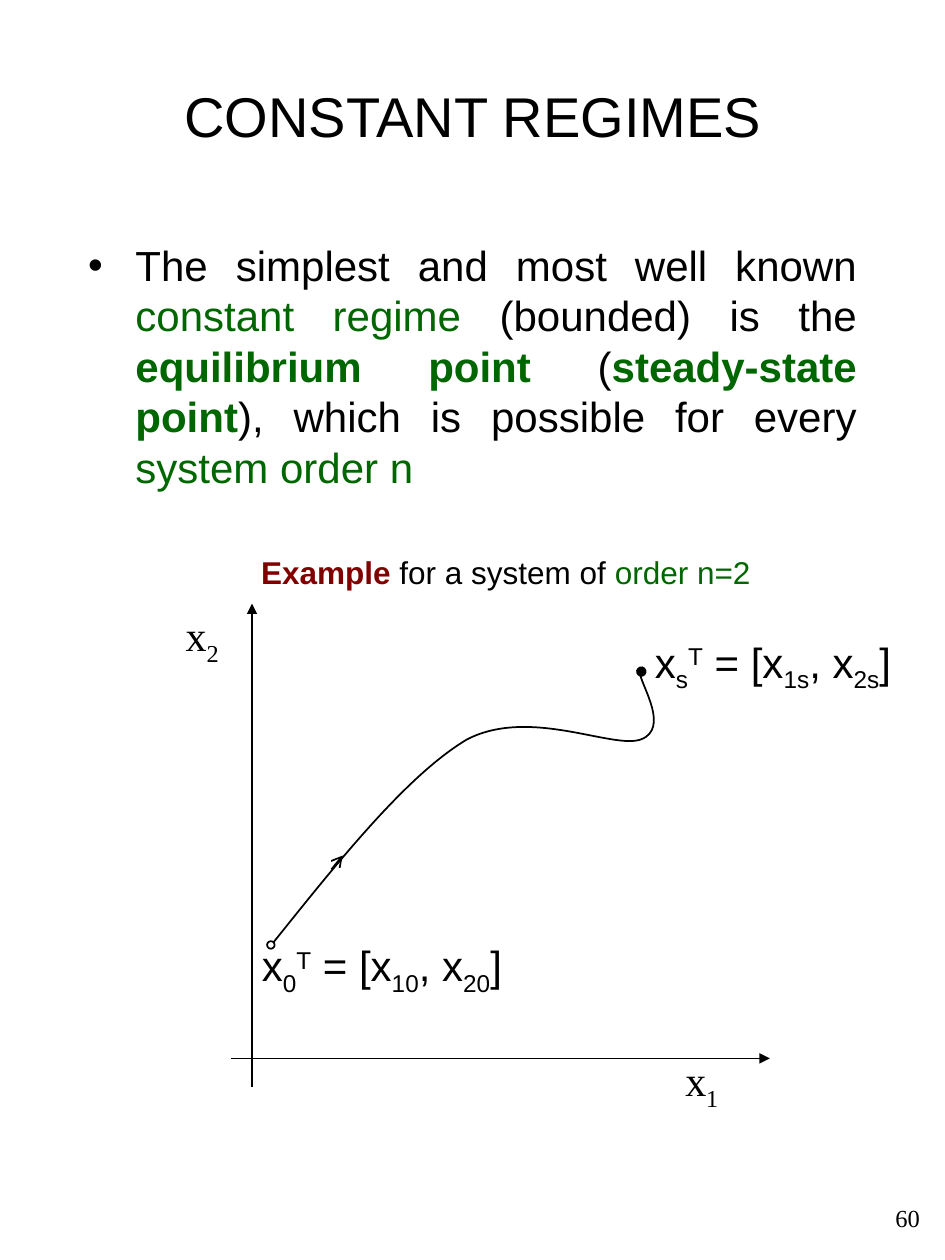
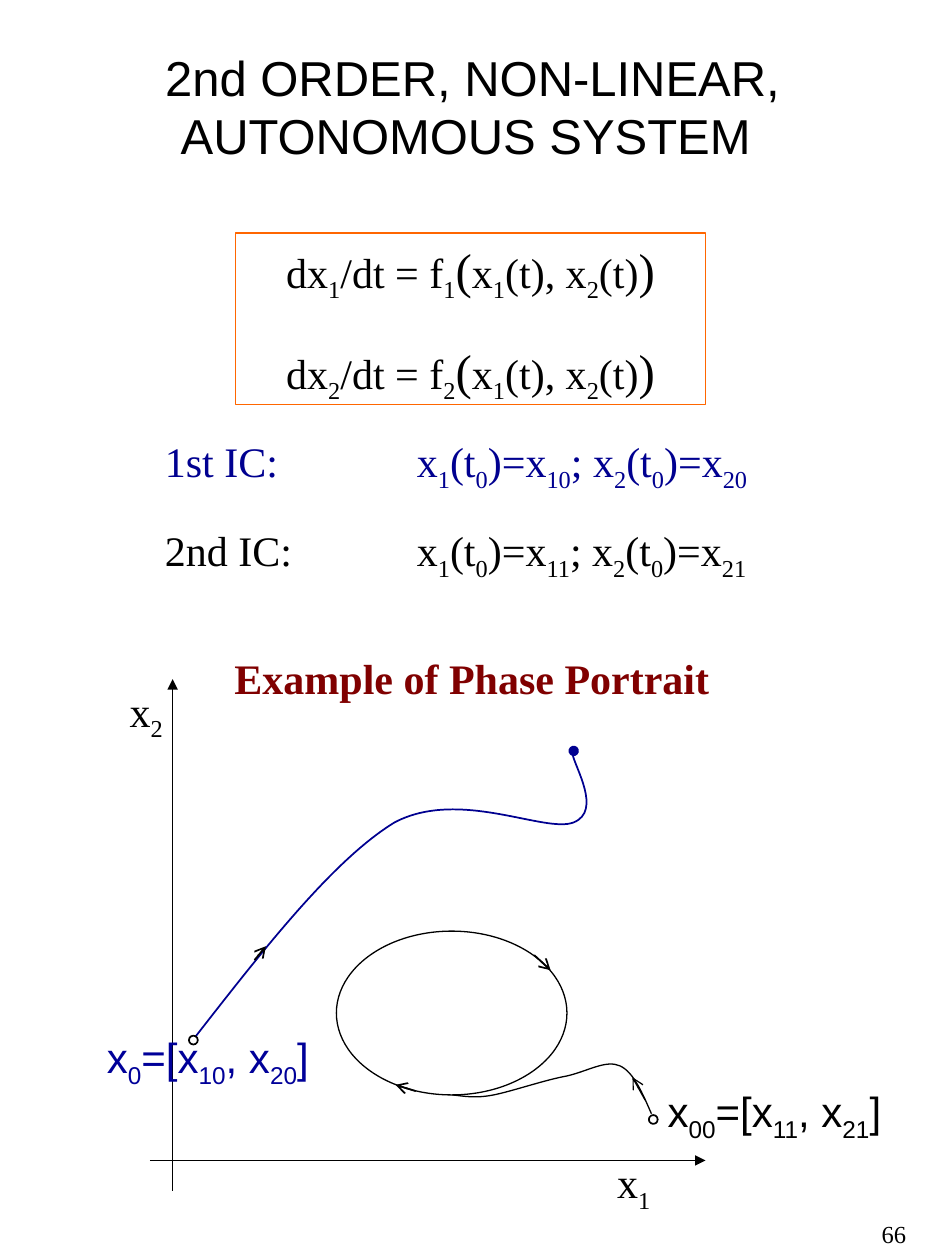
from lxml import etree
from pptx import Presentation
from pptx import util as u
from pptx.dml.color import RGBColor
from pptx.enum import shapes, text
from pptx.oxml.ns import qn

BLACK = RGBColor(0x00, 0x00, 0x00)
GREEN = RGBColor(0x00, 0x66, 0x00)
RED = RGBColor(0x80, 0x00, 0x00)
NAVY = RGBColor(0x00, 0x00, 0x90)
BLUE = RGBColor(0x00, 0x00, 0x99)
ORANGE = RGBColor(0xFF, 0x66, 0x00)
SANS, SERIF = "Arial", "Times New Roman"
ALIGN, KIND = text.PP_ALIGN, shapes.MSO_SHAPE

# Content: a paragraph is a list of (text, format); _sub_ and ^sup^ mark indices
LEAF = {"color": GREEN}
KEY = {"color": GREEN, "bold": True}
BODY = [("The simplest and most well known ", {}), ("constant regime", LEAF),
        (" (bounded) is the ", {}), ("equilibrium point ", KEY), ("(", {}),
        ("steady-state point", KEY), ("), which is possible for every ", {}),
        ("system order n", LEAF)]
CASE = [("Example ", {"color": RED, "bold": True}), ("for a system of ", {}),
        ("order n=2", LEAF)]
BIG = {"size": u.Pt(28)}
RATES = [[(f"dx_{n}_/dt = f_{n}_", {}), ("(", BIG),
          ("x_1_(t), x_2_(t)", {}), (")", BIG)] for n in (1, 2)]
STARTS = [[(f"{name} IC:\tx_1_(t_0_)=x_1{n}_; x_2_(t_0_)=x_2{n}_", {"color": tint})]
          for name, n, tint in (("1st", 0, NAVY), ("2nd", 1, BLACK))]

# Curves: a start point, then three points for each Bezier piece
ORBIT = [(0, 1), (.17, .69), (.34, .38), (.49, .25), (.65, .13), (.86, .29),
         (.93, .25), (1, .21), (.91, 0), (.93, 0)]
SPIRAL = [(5.17, 8.84), (5.1, 8.68), (5.03, 8.51), (4.92, 8.46), (4.81, 8.41),
          (4.67, 8.5), (4.5, 8.54), (4.33, 8.57), (4.07, 8.66), (3.92, 8.69),
          (3.77, 8.72), (3.68, 8.7), (3.59, 8.69)]


def place(shape, box):
    for name, val in zip(("left", "top", "width", "height"), box):
        setattr(shape, name, u.Inches(val))


def add_run(para, words, fmt, base=0):
    if not words:
        return
    run = para.add_run()
    run.text = words
    for name, val in fmt.items():
        if name == "color":
            run.font.color.rgb = val
        else:
            setattr(run.font, name, val)
    if base:
        run.font._element.set("baseline", str(base * 1000))


def write(shape, paras, font=SANS, size=24, align=ALIGN.LEFT, gap=12,
          anchor=text.MSO_ANCHOR.TOP, after=6, tab=None):
    frame = shape.text_frame
    frame.word_wrap = True
    frame.auto_size = text.MSO_AUTO_SIZE.NONE
    frame.vertical_anchor = anchor
    for i, parts in enumerate(paras):
        para = frame.add_paragraph() if i else frame.paragraphs[0]
        para.alignment = align
        para.space_before = u.Pt(gap if i else 0)
        para.space_after = u.Pt(after)
        if tab:
            stops = etree.SubElement(para._p.get_or_add_pPr(), qn("a:tabLst"))
            etree.SubElement(stops, qn("a:tab"), pos=str(u.Inches(tab)), algn="l")
        for words, extra in parts:
            fmt = {"name": font, "size": u.Pt(size), "bold": False,
                   "color": BLACK, **extra}
            for j, low in enumerate(words.split("_")):
                if j % 2:
                    add_run(para, low, fmt, -25)
                    continue
                for k, part in enumerate(low.split("^")):
                    add_run(para, part, fmt, 30 if k % 2 else 0)


def label(slide, box, words, color=BLACK, **style):
    shape = slide.shapes.add_textbox(*map(u.Inches, box))
    paras = [[(words, {"color": color})]] if isinstance(words, str) else words
    write(shape, paras, **style)


def stroke(shape, color=BLACK, width=1, tip=None):
    shape.line.color.rgb = color
    shape.line.width = u.Pt(width)
    if tip:
        ln = shape._element.spPr.get_or_add_ln()
        etree.SubElement(ln, qn("a:tailEnd"), type=tip)


def arrow(slide, ends, tip="arrow", width=1):
    line = slide.shapes.add_connector(shapes.MSO_CONNECTOR.STRAIGHT,
                                      *map(u.Inches, ends))
    stroke(line, BLACK, width, tip)
    etree.SubElement(line._element.spPr, qn("a:effectLst"))


def outline(slide, kind, box, color=BLACK, width=.75):
    shape = slide.shapes.add_shape(kind, *map(u.Inches, box))
    shape.shadow.inherit = False
    shape.fill.background()
    stroke(shape, color, width)
    return shape


def dot(slide, x, y, d=.07):
    outline(slide, KIND.OVAL, (x, y, d, d), width=1)


def curve(slide, points, color=BLACK, width=1, tip=None):
    first, *rest = [tuple(map(u.Inches, p)) for p in points]
    pen = slide.shapes.build_freeform(*first)
    pen.add_line_segments(rest, close=False)
    shape = pen.convert_to_shape()
    shape.shadow.inherit = False
    shape.fill.background()
    stroke(shape, color, width, tip)
    # Turn every three line steps into one Bezier piece
    steps = shape._element.xpath(".//a:lnTo")
    for i in range(0, len(steps), 3):
        bend = etree.Element(qn("a:cubicBezTo"))
        steps[i].addprevious(bend)
        for step in steps[i:i + 3]:
            bend.append(step[0])
            step.getparent().remove(step)


def orbit(slide, box, color):
    x, y, w, h = box
    curve(slide, [(x + a * w, y + b * h) for a, b in ORBIT], color, 1, "oval")


def axes(slide, up, right, marks):
    for ends in (up, right):
        arrow(slide, ends, "triangle", .75)
    for n, (box, align) in enumerate(marks, 1):
        label(slide, box, f"x_{n}_", font=SERIF, align=align)


def start(deck, layout, title, box, size, number, corner):
    slide = deck.slides.add_slide(deck.slide_layouts[layout])
    place(slide.shapes.title, box)
    write(slide.shapes.title, [[(title, {})]], size=size, align=ALIGN.CENTER,
          anchor=text.MSO_ANCHOR.MIDDLE, after=0)
    label(slide, corner, number, font=SERIF, size=14, align=ALIGN.RIGHT,
          anchor=text.MSO_ANCHOR.BOTTOM)
    return slide


def regimes(deck):
    slide = start(deck, 1, "CONSTANT REGIMES", (.21, .4, 7.09, 1.03), 32,
                  "60", (5.32, 9.33, 2.08, .5))
    body = slide.placeholders[1]
    place(body, (.6, 1.85, 6.3, 2.12))
    write(body, [BODY], align=ALIGN.JUSTIFY)
    # Trajectory to the equilibrium point
    axes(slide, (2, 8.63, 2, 4.79), (1.83, 8.4, 6.11, 8.4),
         [((5.34, 8.32, .78, .61), ALIGN.LEFT),
          ((1.21, 4.79, .79, .5), ALIGN.CENTER)])
    orbit(slide, (2.17, 5.33, 3.14, 2.15), BLACK)
    dot(slide, 2.12, 7.47, .06)
    arrow(slide, (2.63, 6.9, 2.72, 6.79))
    label(slide, (1.98, 7.41, 2.26, .5), "x_0_^T^ = [x_10_, x_20_]")
    label(slide, (1.65, 4.34, 4.73, .4), [CASE], size=18, align=ALIGN.CENTER)
    label(slide, (5.1, 5, 2.26, .51), "x_s_^T^ = [x_1s_, x_2s_]")


def portrait(deck):
    slide = start(deck, 5, "2nd ORDER, NON-LINEAR, AUTONOMOUS SYSTEM ",
                  (0, .22, 7.5, 1.24), 28, "66", (5.54, 9.49, 1.75, .47))
    # Equations and initial conditions
    frame = outline(slide, KIND.RECTANGLE, (1.87, 1.85, 3.73, 1.36), ORANGE)
    write(frame, RATES, font=SERIF, align=ALIGN.CENTER, gap=15)
    label(slide, (1.21, 3.41, 5.08, 1.19), STARTS, font=SERIF, tab=2)
    label(slide, (.98, 5.13, 5.53, .51),
          [[("Example of Phase Portrait", {"color": RED, "bold": True})]],
          font=SERIF, align=ALIGN.CENTER)
    # Phase portrait
    axes(slide, (1.37, 9.45, 1.37, 5.39), (1.19, 9.21, 5.6, 9.21),
         [((4.8, 9.13, .8, .5), ALIGN.LEFT), ((.93, 5.39, .53, .5), ALIGN.LEFT)])
    orbit(slide, (1.55, 5.96, 3.23, 2.27), NAVY)
    outline(slide, KIND.OVAL, (2.67, 7.39, 1.83, 1.3))
    curve(slide, SPIRAL, width=.75)
    for x, y in ((1.5, 8.22), (5.15, 8.85)):
        dot(slide, x, y)
    for ends in ((2.02, 7.62, 2.11, 7.51), (3.3, 8.66, 3.14, 8.61),
                 (4.24, 7.58, 4.37, 7.7)):
        arrow(slide, ends)
    arrow(slide, (5.12, 8.73, 5.02, 8.55), width=.75)
    label(slide, (.75, 8.14, 2.26, .5), "x_0_=[x_10_, x_20_]", BLUE)
    label(slide, (5.2, 8.57, 2.14, .5), "x_00_=[x_11_, x_21_]")


def main():
    deck = Presentation()
    deck.slide_width, deck.slide_height = u.Inches(7.5), u.Inches(10)
    regimes(deck)
    portrait(deck)
    deck.save("out.pptx")


if __name__ == "__main__":
    main()
